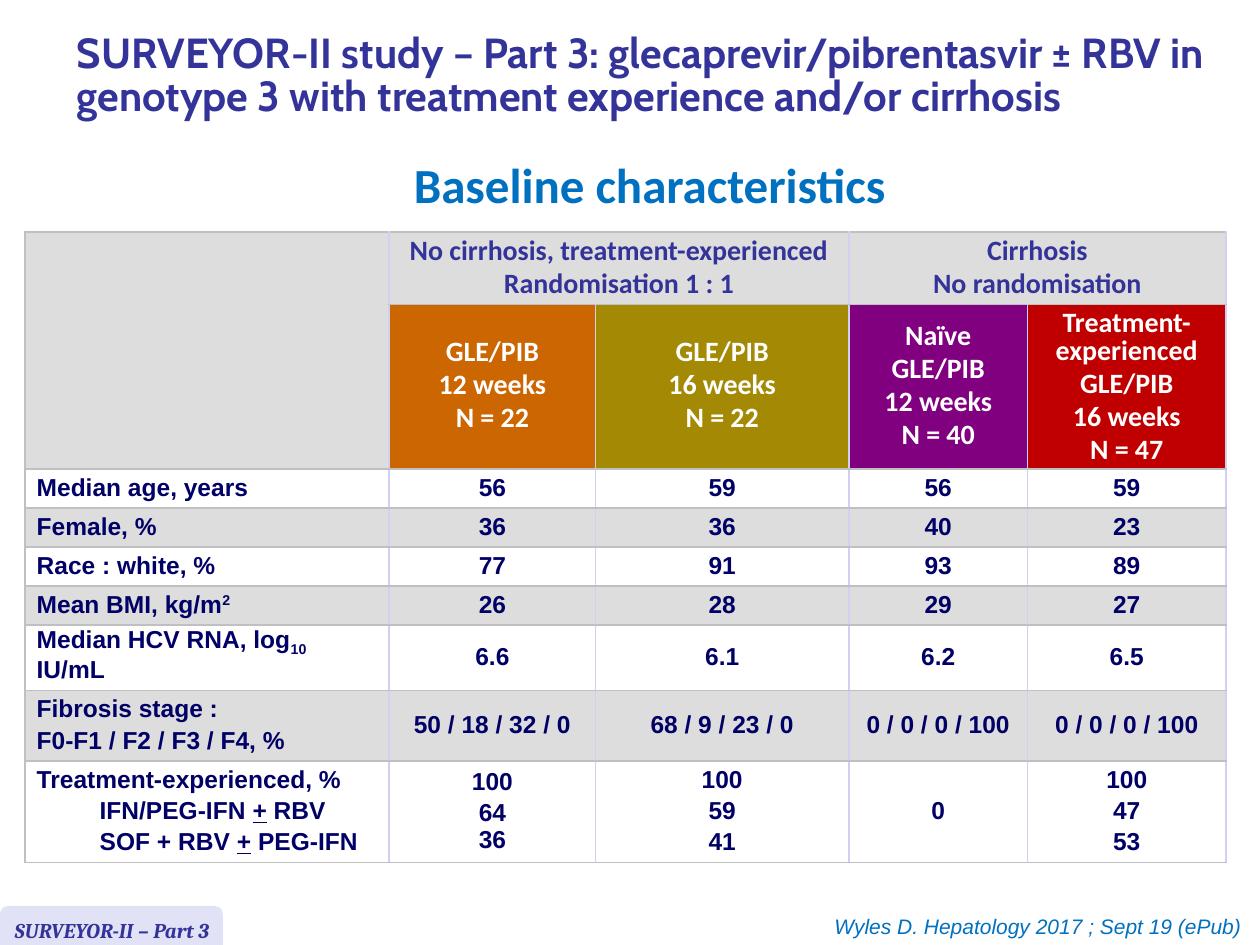
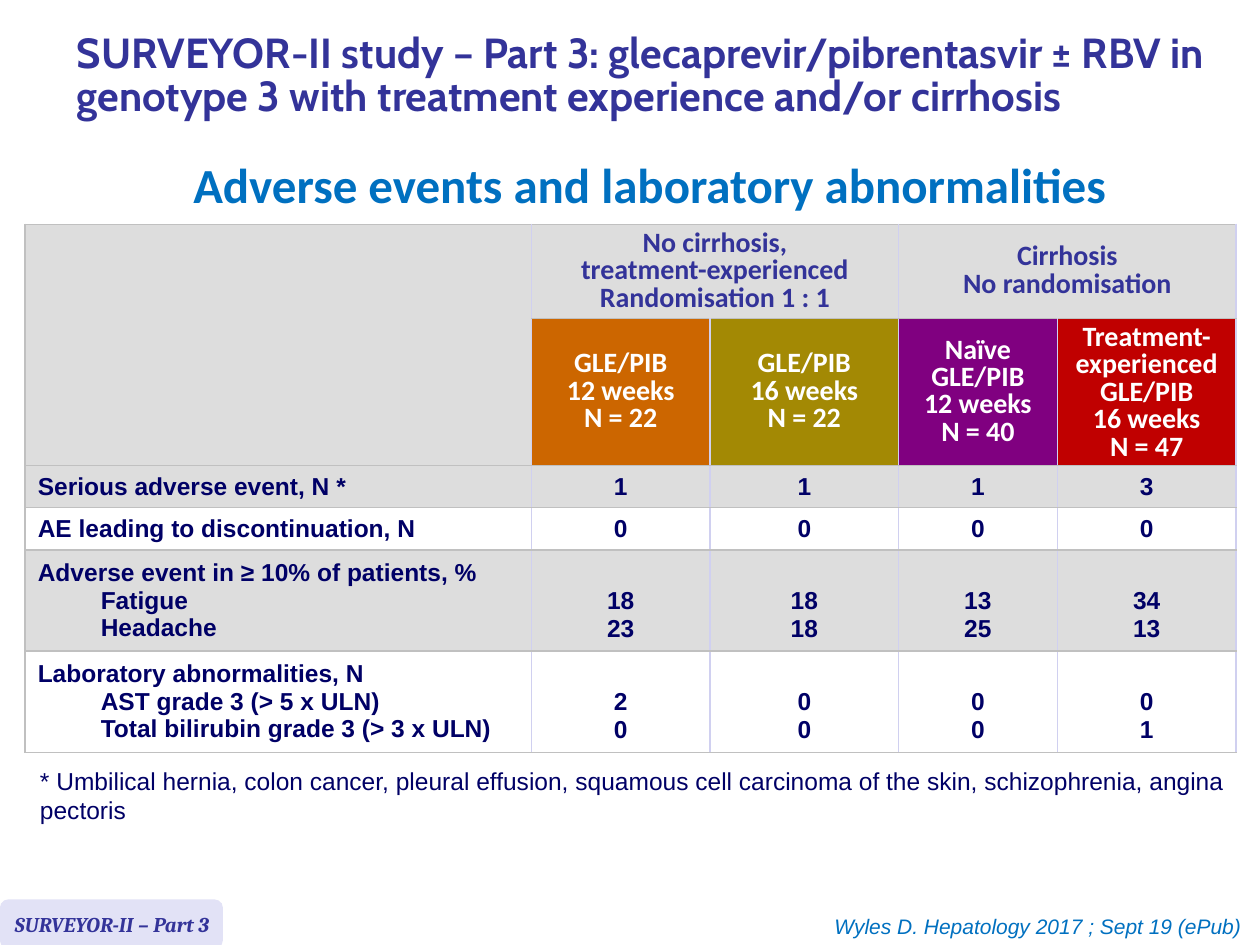
from dataclasses import dataclass
from typing import NamedTuple, Optional, Sequence, Union

from lxml import etree
from pptx import Presentation
from pptx.dml.color import RGBColor
from pptx.enum.shapes import MSO_SHAPE
from pptx.enum.text import MSO_ANCHOR, MSO_AUTO_SIZE, PP_ALIGN
from pptx.oxml.ns import qn
from pptx.util import Pt

LEFT, CENTER, RIGHT = PP_ALIGN.LEFT, PP_ALIGN.CENTER, PP_ALIGN.RIGHT
MIDDLE, BOTTOM = MSO_ANCHOR.MIDDLE, MSO_ANCHOR.BOTTOM
ROUNDED = MSO_SHAPE.ROUNDED_RECTANGLE
NO_AUTOFIT = MSO_AUTO_SIZE.NONE
TITLE_ONLY = 5


# Theme
class TextStyle(NamedTuple):
    font: str
    size: float
    color: str
    bold: bool = False
    italic: bool = False


@dataclass(frozen=True)
class Theme:
    title: TextStyle = TextStyle("Cabin", 24, "333399", bold=True)
    heading: TextStyle = TextStyle("Calibri", 28, "0070C0", bold=True)
    group: TextStyle = TextStyle("Calibri", 16, "333399", bold=True)
    arm: TextStyle = TextStyle("Calibri", 16, "FFFFFF", bold=True)
    body: TextStyle = TextStyle("Arial", 14, "000066", bold=True)
    footnote: TextStyle = TextStyle("Arial", 14, "000066")
    badge: TextStyle = TextStyle("Cambria", 12, "333399", bold=True, italic=True)
    citation: TextStyle = TextStyle("Arial", 12, "0070C0", italic=True)
    badge_fill: str = "E2E2F6"
    grey: str = "DDDDDD"
    white: str = "FFFFFF"
    edge: str = "C0C0C0"
    column_edge: str = "D0D0F0"
    arm_fills: tuple = ("CC6600", "A38904", "800080", "C00000")


THEME = Theme()


# Content types
class Run(NamedTuple):
    text: str
    baseline: int = 0
    underline: bool = False


Line = Union[str, tuple[Run, ...]]


class Box(NamedTuple):
    left: float
    top: float
    width: float
    height: float


class Spacing(NamedTuple):
    line: Optional[float] = None  # a factor, or a Pt length
    before: float = 0


@dataclass(frozen=True)
class Row:
    height: float
    label: Line
    values: Sequence[str]
    details: Sequence[Line] = ()
    value_anchor: MSO_ANCHOR = MIDDLE


@dataclass(frozen=True)
class ArmTable:
    left: float
    top: float
    widths: Sequence[float]
    header_heights: Sequence[float]
    groups: Sequence[str]
    rows: Sequence[Row]
    header_spacing: Spacing
    body_spacing: Spacing
    side_inset: float
    first_fill: str
    second_fill: str


@dataclass(frozen=True)
class StudySlide:
    heading: str
    table: ArmTable
    badge_top: float
    footnote: str = ""


# Slide content
TITLE = ("SURVEYOR-II study – Part 3: glecaprevir/pibrentasvir ± RBV in "
         "genotype 3 with treatment experience and/or cirrhosis")
BADGE = "SURVEYOR-II – Part 3"
CITATION = "Wyles D. Hepatology 2017 ; Sept 19 (ePub)"
ARMS = ("GLE/PIB\n12 weeks\nN = 22", "GLE/PIB\n16 weeks\nN = 22",
        "Naïve\nGLE/PIB\n12 weeks\nN = 40",
        "Treatment-experienced\nGLE/PIB\n16 weeks\nN = 47")
PLUS_MINUS = Run("+", underline=True)

BASELINE = ArmTable(
    left=14.4, top=132.6,
    widths=(208, 118, 144.7, 102.2, 113.3),
    header_heights=(41.4, 94),
    groups=("No cirrhosis, treatment-experienced\nRandomisation 1 : 1",
            "Cirrhosis\nNo randomisation"),
    rows=(
        Row(22.3, "Median age, years", ("56", "59", "56", "59")),
        Row(22.3, "Female, %", ("36", "36", "40", "23")),
        Row(22.3, "Race : white, %", ("77", "91", "93", "89")),
        Row(22.3, (Run("Mean BMI, kg/m"), Run("2", baseline=30)),
            ("26", "28", "29", "27")),
        Row(37.4, (Run("Median HCV RNA, log"), Run("10", baseline=-25), Run(" IU/mL")),
            ("6.6", "6.1", "6.2", "6.5")),
        Row(40.3, "Fibrosis stage :\nF0-F1 / F2 / F3 / F4, %",
            ("50 / 18 / 32 / 0", "68 / 9 / 23 / 0", "0 / 0 / 0 / 100", "0 / 0 / 0 / 100")),
        Row(58, "Treatment-experienced, %",
            ("100\n64\v36", "100\n59\n41", "0", "100\n47\n53"),
            details=((Run("IFN/PEG-IFN "), PLUS_MINUS, Run(" RBV")),
                     (Run("SOF + RBV "), PLUS_MINUS, Run(" PEG-IFN")))),
    ),
    header_spacing=Spacing(0.8, 3.2), body_spacing=Spacing(Pt(15), 2.8),
    side_inset=6.6, first_fill=THEME.white, second_fill=THEME.grey,
)

SAFETY = ArmTable(
    left=14.4, top=128.2,
    widths=(289.2, 102.2, 107.7, 90.7, 102.2),
    header_heights=(53.7, 84),
    groups=("No cirrhosis,\ntreatment-experienced\nRandomisation 1 : 1",
            "Cirrhosis\nNo randomisation"),
    rows=(
        Row(24.2, "Serious adverse event, N *", ("1", "1", "1", "3")),
        Row(24.2, "AE leading to discontinuation, N", ("0", "0", "0", "0")),
        Row(57.8, "Adverse event in ≥ 10% of patients, %",
            ("18\n23", "18\n18", "13\n25", "34\n13"),
            details=("Fatigue", "Headache"), value_anchor=BOTTOM),
        Row(57.8, "Laboratory abnormalities, N",
            ("2\n0", "0\n0", "0\n0", "0\n1"),
            details=("AST grade 3 (> 5 x ULN)", "Total bilirubin grade 3 (> 3 x ULN)"),
            value_anchor=BOTTOM),
    ),
    header_spacing=Spacing(0.8), body_spacing=Spacing(),
    side_inset=7.2, first_fill=THEME.grey, second_fill=THEME.white,
)

SLIDES = (
    StudySlide("Baseline characteristics", BASELINE, badge_top=517.7),
    StudySlide("Adverse events and laboratory abnormalities", SAFETY, badge_top=514,
               footnote="* Umbilical hernia, colon cancer, pleural effusion, squamous cell "
                        "carcinoma of the skin, schizophrenia, angina pectoris"),
)


# Text
def write_lines(frame, lines: Sequence[Line], style: TextStyle, align=LEFT,
                spacing: Spacing = Spacing(), indent_from: Optional[int] = None) -> None:
    for index, line in enumerate(lines):
        paragraph = frame.add_paragraph() if index else frame.paragraphs[0]
        if isinstance(line, str):
            paragraph.text = line
        else:
            for part in line:
                run = paragraph.add_run()
                run.text = part.text
                if part.underline:
                    run.font.underline = True
                if part.baseline:
                    run._r.get_or_add_rPr().set("baseline", str(part.baseline * 1000))
        if indent_from is not None and index >= indent_from:
            paragraph.level = 1
            properties = paragraph._p.get_or_add_pPr()
            properties.set("marL", str(Pt(36)))
            properties.set("indent", "0")
        paragraph.alignment = align
        paragraph.line_spacing = spacing.line
        paragraph.space_before = Pt(spacing.before if index else 0)
        font = paragraph.font
        font.name, font.size = style.font, Pt(style.size)
        font.bold, font.italic = style.bold, style.italic
        font.color.rgb = RGBColor.from_string(style.color)


def add_text(slide, box: Box, text: str, style: TextStyle, align=LEFT,
             spacing: Spacing = Spacing()) -> None:
    frame = slide.shapes.add_textbox(*map(Pt, box)).text_frame
    frame.word_wrap = True
    write_lines(frame, [text], style, align, spacing)


# Table
def format_cell(cell, fill: str, left_edge: str, side_inset: float, anchor=MIDDLE) -> None:
    properties = cell._tc.get_or_add_tcPr()
    edges = (("a:lnL", left_edge), ("a:lnR", THEME.column_edge),
             ("a:lnT", THEME.edge), ("a:lnB", THEME.edge))
    for tag, color in edges:
        line = etree.SubElement(properties, qn(tag), w=str(Pt(1)))
        solid = etree.SubElement(line, qn("a:solidFill"))
        etree.SubElement(solid, qn("a:srgbClr"), val=color)
    cell.fill.solid()
    cell.fill.fore_color.rgb = RGBColor.from_string(fill)
    cell.vertical_anchor = anchor
    cell.margin_left = cell.margin_right = Pt(side_inset)
    cell.margin_top = cell.margin_bottom = Pt(3.6)
    if anchor == BOTTOM:
        cell.margin_bottom = Pt(5)


def add_arm_table(slide, content: ArmTable) -> None:
    heights = (*content.header_heights, *(row.height for row in content.rows))
    box = Box(content.left, content.top, sum(content.widths), sum(heights))
    table = slide.shapes.add_table(len(heights), len(content.widths), *map(Pt, box)).table
    table.first_row = table.horz_banding = False
    for column, width in zip(table.columns, content.widths):
        column.width = Pt(width)
    for table_row, height in zip(table.rows, heights):
        table_row.height = Pt(height)

    # Header rows: patient groups over treatment arms
    for row_index, fills in enumerate(((THEME.grey,) * 4, THEME.arm_fills)):
        for column, fill in enumerate((THEME.grey, *fills)):
            edge = THEME.column_edge if column else THEME.edge
            format_cell(table.cell(row_index, column), fill, edge, 6.6)
    table.cell(0, 0).merge(table.cell(1, 0))
    for column, group in zip((1, 3), content.groups):
        cell = table.cell(0, column)
        cell.merge(table.cell(0, column + 1))
        write_lines(cell.text_frame, group.split("\n"), THEME.group, CENTER,
                    content.header_spacing)
    for column, arm in enumerate(ARMS, start=1):
        write_lines(table.cell(1, column).text_frame, arm.split("\n"), THEME.arm, CENTER,
                    content.header_spacing)

    # Body rows
    for index, row in enumerate(content.rows):
        fill = content.second_fill if index % 2 else content.first_fill
        label = row.label.split("\n") if isinstance(row.label, str) else [row.label]
        cell = table.cell(index + 2, 0)
        format_cell(cell, fill, THEME.edge, content.side_inset)
        write_lines(cell.text_frame, [*label, *row.details], THEME.body,
                    spacing=content.body_spacing, indent_from=len(label))
        for column, value in enumerate(row.values, start=1):
            cell = table.cell(index + 2, column)
            format_cell(cell, fill, THEME.column_edge, content.side_inset, row.value_anchor)
            write_lines(cell.text_frame, value.split("\n"), THEME.body, CENTER,
                        content.body_spacing)


# Shared slide parts
def add_title(slide) -> None:
    title = slide.shapes.title
    title.left, title.top, title.width, title.height = map(Pt, Box(36.7, 5.8, 683.3, 77))
    frame = title.text_frame
    frame.auto_size = NO_AUTOFIT
    frame.vertical_anchor = MIDDLE
    write_lines(frame, [TITLE], THEME.title, spacing=Spacing(0.85))


def add_footer(slide, badge_top: float) -> None:
    badge = slide.shapes.add_shape(ROUNDED, *map(Pt, Box(0, badge_top, 127.4, 28)))
    badge.shadow.inherit = False
    badge.fill.solid()
    badge.fill.fore_color.rgb = RGBColor.from_string(THEME.badge_fill)
    badge.line.fill.background()
    badge.text_frame.word_wrap = False
    badge.text_frame.vertical_anchor = MIDDLE
    write_lines(badge.text_frame, [BADGE], THEME.badge)
    add_text(slide, Box(314.6, 518.4, 402, 21.6), CITATION, THEME.citation, RIGHT)


def main() -> None:
    presentation = Presentation()
    presentation.slide_width, presentation.slide_height = Pt(720), Pt(540)
    for content in SLIDES:
        slide = presentation.slides.add_slide(presentation.slide_layouts[TITLE_ONLY])
        add_title(slide)
        add_text(slide, Box(31, 103, 680.4, 26), content.heading, THEME.heading, CENTER,
                 Spacing(Pt(15.2)))
        add_arm_table(slide, content.table)
        if content.footnote:
            add_text(slide, Box(15.8, 434.2, 692, 41), content.footnote, THEME.footnote)
        add_footer(slide, content.badge_top)
    presentation.save("out.pptx")


if __name__ == "__main__":
    main()
